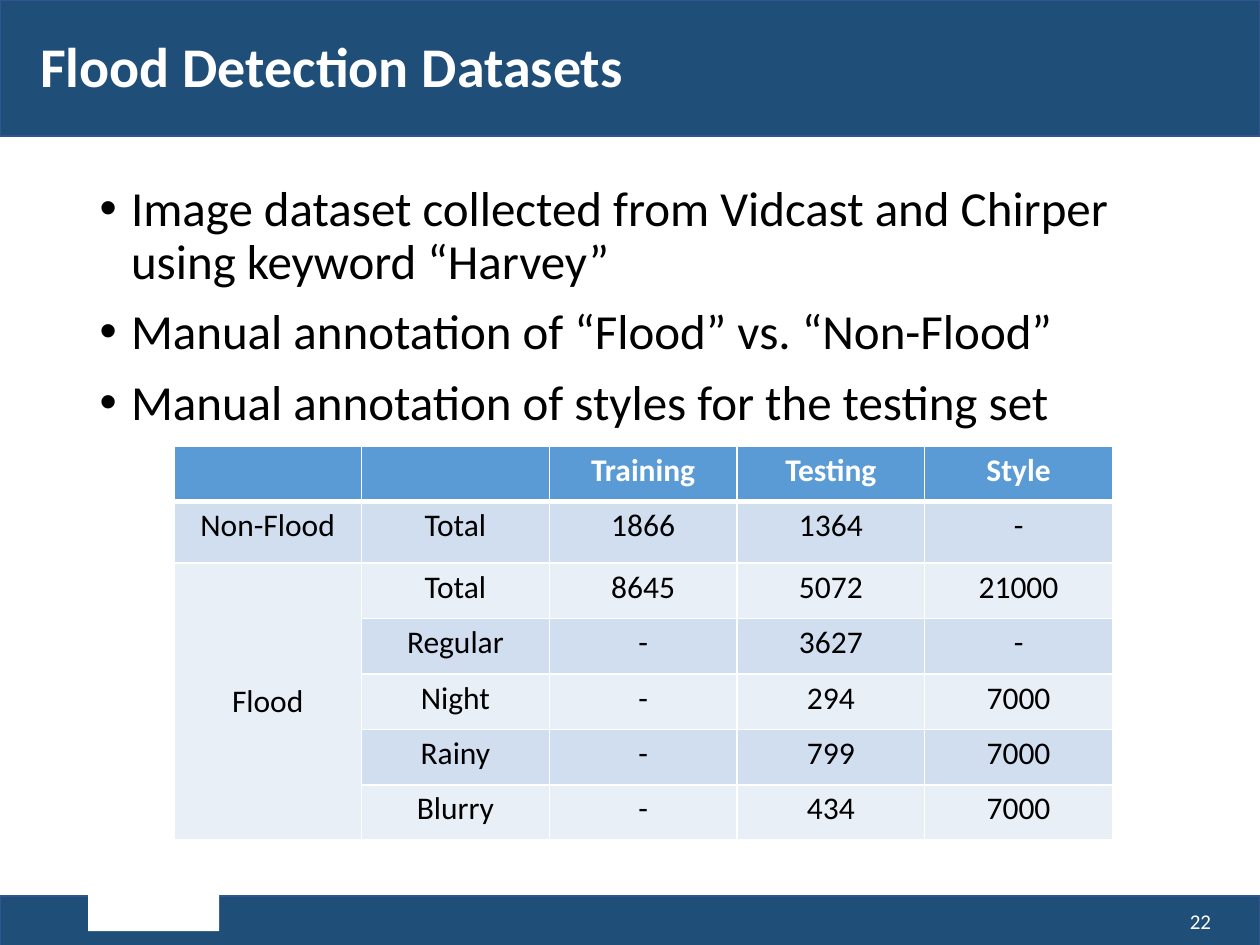
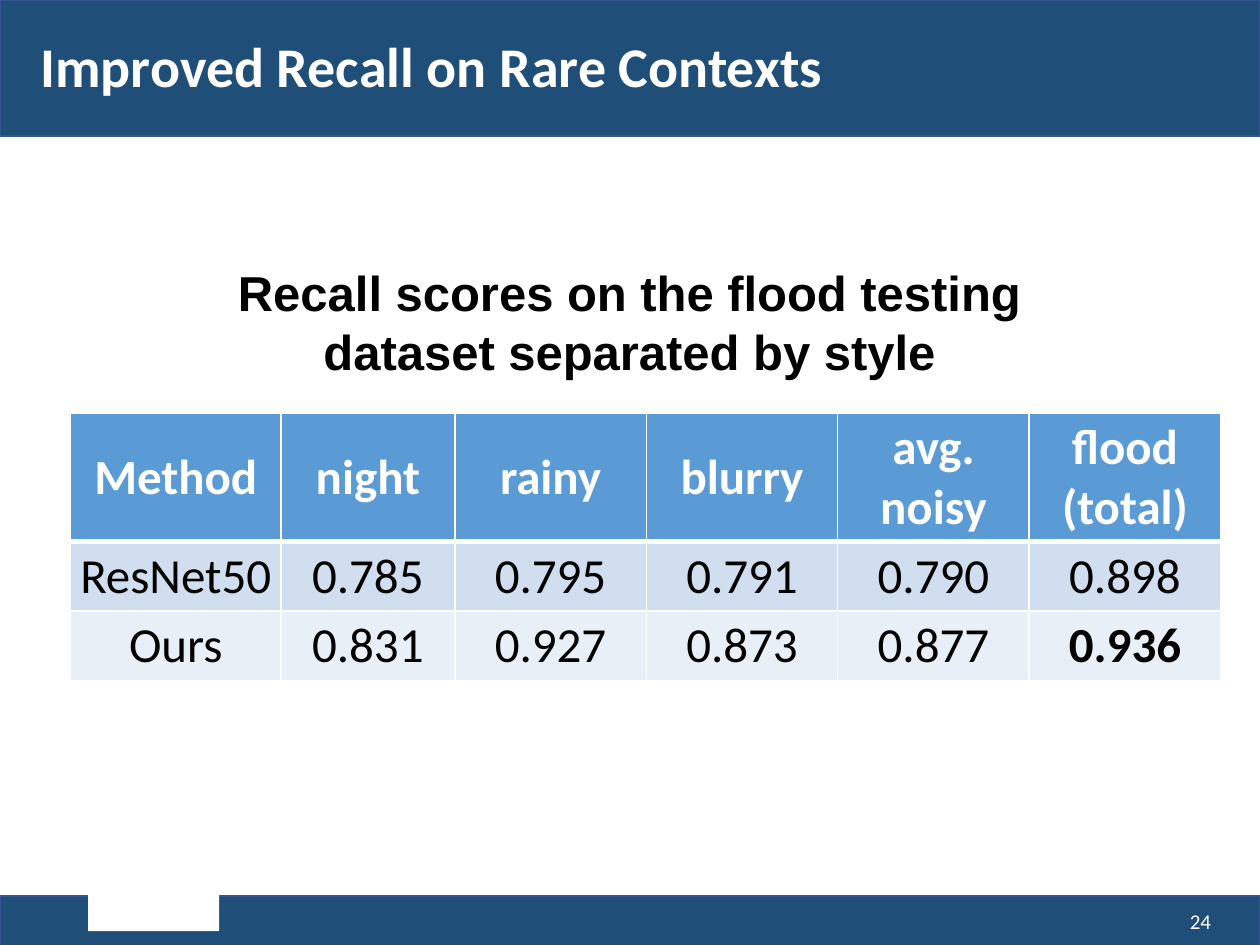
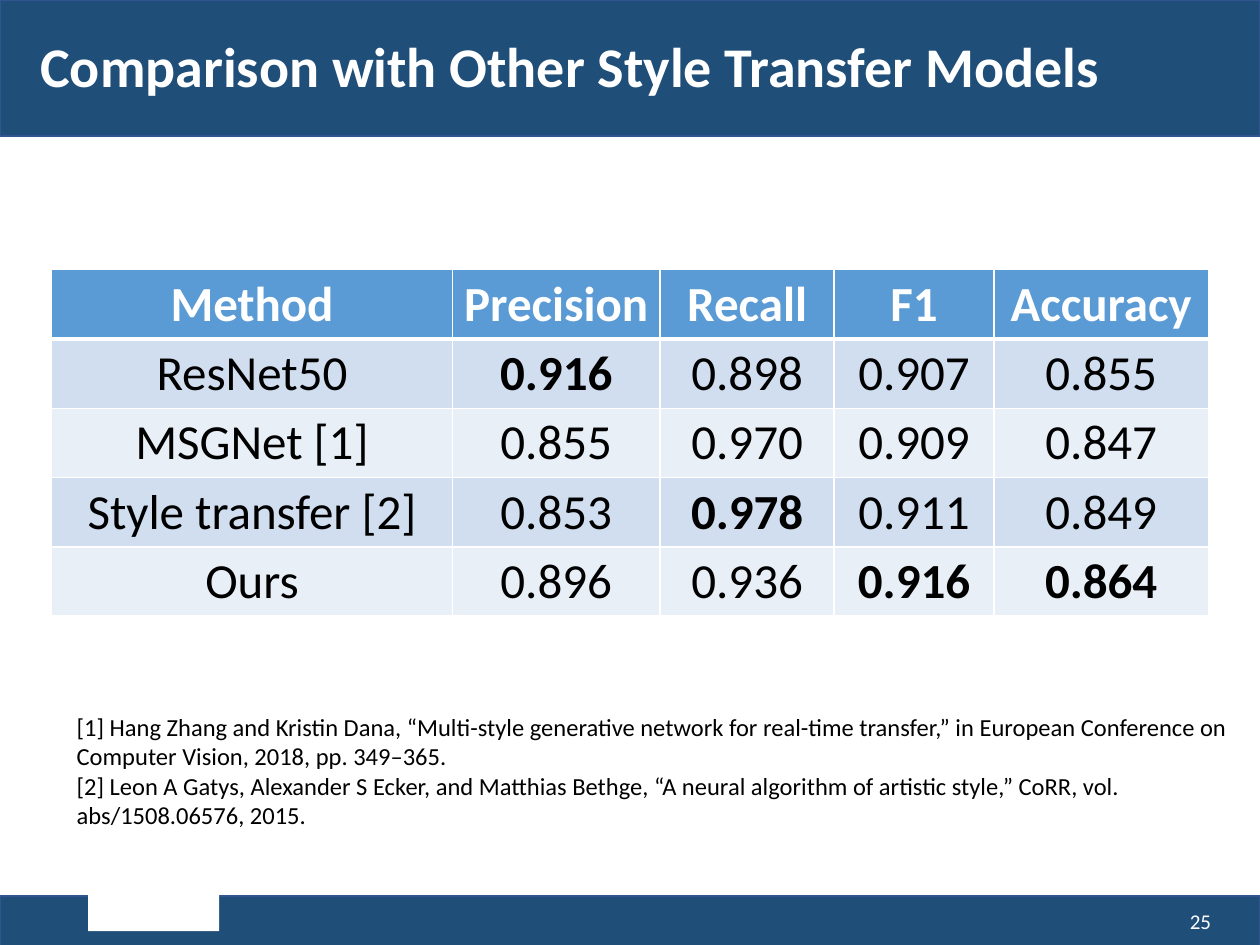
"""Build three slides on flood detection data and results."""
from lxml.etree import SubElement
from pptx import Presentation
from pptx.dml.color import RGBColor
from pptx.enum.shapes import MSO_SHAPE as Shape
from pptx.enum.text import MSO_ANCHOR as Anchor, MSO_AUTO_SIZE as AutoSize, PP_ALIGN as Align
from pptx.oxml import parse_xml
from pptx.oxml.ns import nsdecls, qn
from pptx.util import Inches, Pt

NAVY = RGBColor(0x1F, 0x4E, 0x79)
EDGE = RGBColor(0x32, 0x54, 0x91)
HEADER = RGBColor(0x5B, 0x9B, 0xD5)
STRIPES = (RGBColor(0xE9, 0xEF, 0xF7), RGBColor(0xD0, 0xDE, 0xEF))
WHITE = RGBColor(0xFF, 0xFF, 0xFF)
BLACK = RGBColor(0, 0, 0)

BANDS = [
    ((0, 7.11, 10, 0.4), NAVY, EDGE),
    ((0.7, 6.84, 1.04, 0.55), WHITE, None),
    ((0, 0, 10, 1.08), NAVY, EDGE),
]
TITLE_AREA = (0.22, 0.08, 9.49, 0.94)
NUMBER_AREA = (7.69, 7.18, 2.02, 0.26)
TITLE_ONLY, TITLE_AND_BODY = 5, 1

DATASET_POINTS = [
    "Image dataset collected from Vidcast and Chirper using keyword “Harvey”",
    "Manual annotation of “Flood” vs. “Non-Flood”",
    "Manual annotation of styles for the testing set",
]
DATASETS = [
    ["", "", "Training", "Testing", "Style"],
    ["Non-Flood", "Total", "1866", "1364", "-"],
    ["Flood", "Total", "8645", "5072", "21000"],
    ["", "Regular", "-", "3627", "-"],
    ["", "Night", "-", "294", "7000"],
    ["", "Rainy", "-", "799", "7000"],
    ["", "Blurry", "-", "434", "7000"],
]
RECALL_CAPTION = "Recall scores on the flood testing dataset separated by style"
RECALL = [
    ["Method", "night", "rainy", "blurry", "avg. noisy", "flood (total)"],
    ["ResNet50", "0.785", "0.795", "0.791", "0.790", "0.898"],
    ["Ours", "0.831", "0.927", "0.873", "0.877", "0.936"],
]
COMPARISON = [
    ["Method", "Precision", "Recall", "F1", "Accuracy"],
    ["ResNet50", "0.916", "0.898", "0.907", "0.855"],
    ["MSGNet [1]", "0.855", "0.970", "0.909", "0.847"],
    ["Style transfer [2]", "0.853", "0.978", "0.911", "0.849"],
    ["Ours", "0.896", "0.936", "0.916", "0.864"],
]
REFERENCES = [
    "[1] Hang Zhang and Kristin Dana, “Multi-style generative network for real-time transfer,” "
    "in European Conference on Computer Vision, 2018, pp. 349–365.",
    "[2] Leon A Gatys, Alexander S Ecker, and Matthias Bethge, “A neural algorithm of artistic "
    "style,” CoRR, vol. abs/1508.06576, 2015.",
]


def inches(area):
    return [Inches(length) for length in area]


def place(shape, area):
    shape.left, shape.top, shape.width, shape.height = inches(area)


def style(para, size, color=BLACK, bold=False, align=Align.LEFT, name="Calibri"):
    para.alignment = align
    font = para.font
    font.name, font.size, font.bold = name, Pt(size), bold
    font.color.rgb = color


def add_text(page, area, lines, size, anchor=Anchor.TOP, **look):
    frame = page.shapes.add_textbox(*inches(area)).text_frame
    frame.word_wrap = True
    frame.vertical_anchor = anchor
    frame.text = "\n".join(lines)
    for para in frame.paragraphs:
        style(para, size, **look)


def add_bands(deck, page):
    """Draw the bands once and hand them to the slide master."""
    for area, fill, line in BANDS:
        band = page.shapes.add_shape(Shape.RECTANGLE, *inches(area))
        band.shadow.inherit = False
        band.fill.solid()
        band.fill.fore_color.rgb = fill
        if line:
            band.line.color.rgb = line
            band.line.width = Pt(1)
        else:
            band.line.fill.background()
        deck.slide_master.shapes.element.append(band.element)


def add_page(deck, layout, title, number):
    page = deck.slides.add_slide(deck.slide_layouts[layout])
    heading = page.shapes.title
    place(heading, TITLE_AREA)
    frame = heading.text_frame
    frame.text = title
    frame.auto_size = AutoSize.NONE
    frame.vertical_anchor = Anchor.MIDDLE
    frame.paragraphs[0].line_spacing = 0.9
    style(frame.paragraphs[0], 32, WHITE, bold=True)
    add_text(page, NUMBER_AREA, [str(number)], 12, Anchor.MIDDLE, color=WHITE, align=Align.RIGHT)
    return page


def add_bullets(page, area, points):
    body = page.placeholders[1]
    place(body, area)
    frame = body.text_frame
    frame.text = "\n".join(points)
    frame.auto_size = AutoSize.NONE
    for index, para in enumerate(frame.paragraphs):
        para.line_spacing = 0.9
        para.space_before = Pt(10 if index else 0)
        props = para._p.get_or_add_pPr()
        props.set("marL", str(Inches(0.25)))
        props.set("indent", str(Inches(-0.25)))
        SubElement(props, qn("a:buFont")).set("typeface", "Arial")
        SubElement(props, qn("a:buChar")).set("char", "•")
        style(para, 28)


def set_borders(cell, widths):
    props = cell._tc.get_or_add_tcPr()
    for index, (side, width) in enumerate(zip("LRTB", widths)):
        props.insert(index, parse_xml(
            f'<a:ln{side} {nsdecls("a")} w="{Pt(width)}"><a:solidFill>'
            f'<a:srgbClr val="{WHITE}"/></a:solidFill></a:ln{side}>'))


def add_grid(page, left, top, widths, heights, rows, size, best=(), middle=()):
    """Add a striped table; best cells are bold and middle cells are centred vertically."""
    table = page.shapes.add_table(
        len(rows), len(widths), *inches((left, top, sum(widths), sum(heights)))).table
    for column, width in zip(table.columns, widths):
        column.width = Inches(width)
    for r, (values, height) in enumerate(zip(rows, heights)):
        table.rows[r].height = Inches(height)
        for c, value in enumerate(values):
            cell = table.cell(r, c)
            cell.text = value
            cell.margin_left = cell.margin_right = Inches(0.07)
            cell.margin_top = cell.margin_bottom = Inches(0.04)
            cell.vertical_anchor = Anchor.MIDDLE if (r, c) in middle else Anchor.TOP
            cell.fill.solid()
            cell.fill.fore_color.rgb = STRIPES[r % 2] if r else HEADER
            set_borders(cell, (1, 1, 3 if r == 1 else 1, 1 if r else 3))
            style(cell.text_frame.paragraphs[0], size, BLACK if r else WHITE,
                  bold=r == 0 or (r, c) in best, align=Align.CENTER)
    return table


def main():
    deck = Presentation()
    deck.slide_width, deck.slide_height = Inches(10), Inches(7.5)

    page = add_page(deck, TITLE_AND_BODY, "Flood Detection Datasets", 22)
    add_bands(deck, page)
    add_bullets(page, (0.69, 1.41, 8.83, 5.22), DATASET_POINTS)
    table = add_grid(page, 1.38, 3.54, [1.49] * 5, [0.44, 0.49] + [0.44] * 5, DATASETS, 18,
                     middle={(2, 0)})
    table.cell(2, 0).merge(table.cell(6, 0))

    page = add_page(deck, TITLE_ONLY, "Improved Recall on Rare Contexts", 24)
    add_text(page, (1.15, 2.03, 7.69, 1.04), [RECALL_CAPTION], 28, Anchor.MIDDLE,
             bold=True, align=Align.CENTER, name="Arial")
    add_grid(page, 0.56, 3.28, [1.67, 1.38] + [1.52] * 4, [1.02, 0.55, 0.55], RECALL, 28,
             best={(2, 5)}, middle={(0, c) for c in range(6)})

    page = add_page(deck, TITLE_ONLY, "Comparison with Other Style Transfer Models", 25)
    add_grid(page, 0.41, 2.14, [3.18, 1.65, 1.38, 1.27, 1.7], [0.55] * 5, COMPARISON, 28,
             best={(1, 1), (3, 2), (4, 3), (4, 4)})
    add_text(page, (0.51, 5.6, 9.49, 1.04), REFERENCES, 14)

    deck.save("out.pptx")


if __name__ == "__main__":
    main()
